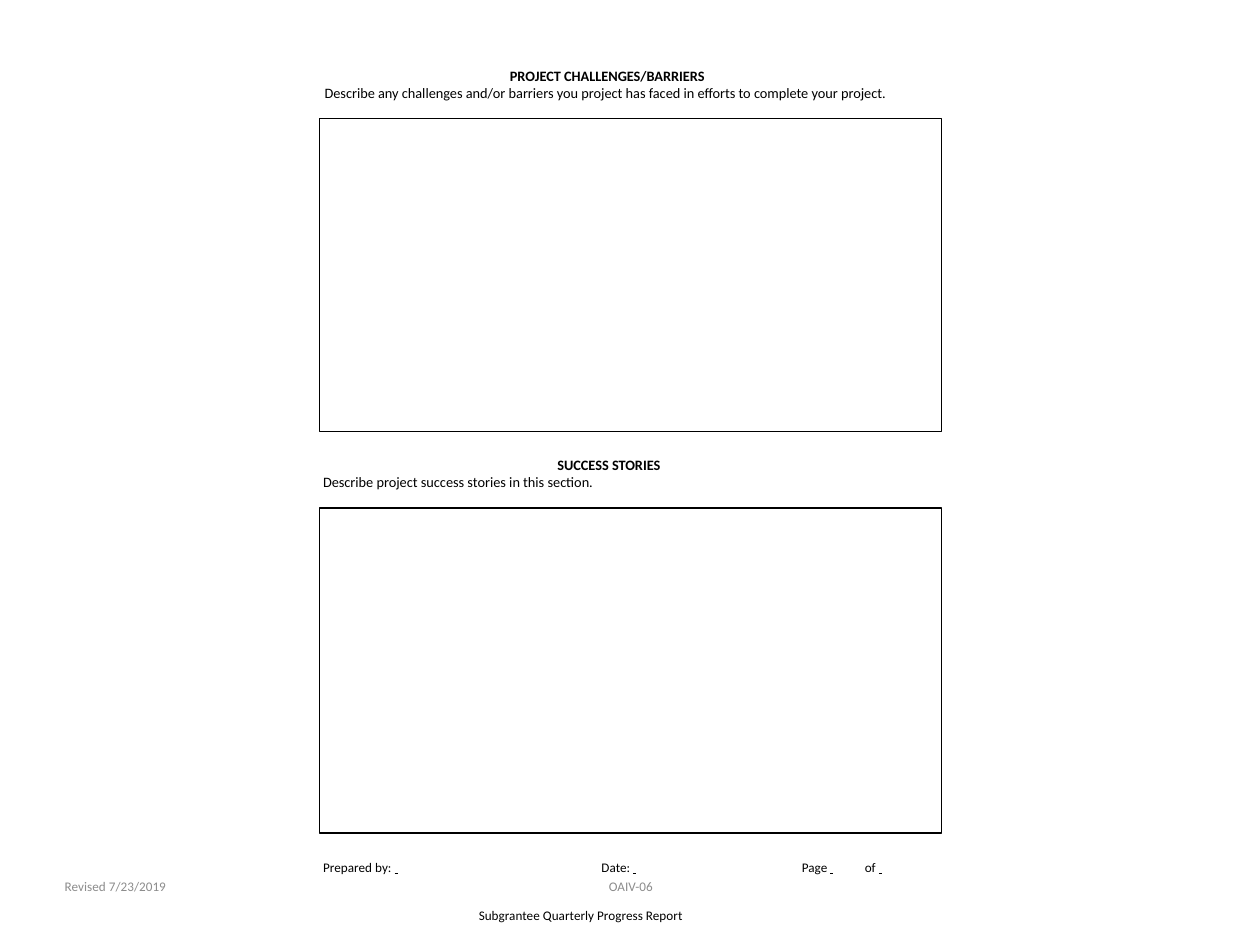
import pptx
import pptx.dml.color
import pptx.enum.shapes
import pptx.enum.text
import pptx.oxml.ns
import pptx.util
from lxml import etree

Pt = pptx.util.Pt
ALIGN = pptx.enum.text.PP_ALIGN
BLACK = pptx.dml.color.RGBColor(0x00, 0x00, 0x00)
GRAY = pptx.dml.color.RGBColor(0x8C, 0x8C, 0x8C)
BLANK = " \t"


class FormPage:
    font_name = "Calibri"
    heading_size = 8.2
    small_size = 7.5

    def __init__(self, slide):
        self.slide = slide

    def frame(self, left, top, width, height):
        box = self.slide.shapes.add_textbox(Pt(left), Pt(top), Pt(width), Pt(height))
        text = box.text_frame
        text.word_wrap = True
        text.margin_left = text.margin_top = text.margin_right = text.margin_bottom = 0
        return text

    def fill_paragraph(self, paragraph, parts, size, color=BLACK, bold=False,
                       align=ALIGN.LEFT, indent=0, tabs=()):
        properties = paragraph._p.get_or_add_pPr()
        properties.set("marL", str(Pt(indent)))
        properties.set("indent", "0")
        if tabs:
            stops = etree.SubElement(properties, pptx.oxml.ns.qn("a:tabLst"))
            for position in tabs:
                etree.SubElement(stops, pptx.oxml.ns.qn("a:tab"),
                                 pos=str(Pt(position)), algn="l")
        paragraph.alignment = align
        paragraph.font.name = self.font_name
        paragraph.font.size = Pt(size)
        paragraph.font.bold = bold
        paragraph.font.color.rgb = color
        for part in parts:
            run = paragraph.add_run()
            run.text = part
            if part == BLANK:
                run.font.underline = True

    def section(self, left, top, width, title, title_align, title_indent,
                prompt, prompt_align, prompt_indent):
        text = self.frame(left, top, width, 21)
        self.fill_paragraph(text.paragraphs[0], [title], self.heading_size, bold=True,
                            align=title_align, indent=title_indent)
        description = text.add_paragraph()
        description.space_before = Pt(0.2)
        self.fill_paragraph(description, [prompt], self.heading_size,
                            align=prompt_align, indent=prompt_indent)

    def line(self, left, top, width, height, parts, color=BLACK,
             align=ALIGN.LEFT, tabs=()):
        text = self.frame(left, top, width, height)
        self.fill_paragraph(text.paragraphs[0], parts, self.small_size, color,
                            align=align, indent=1, tabs=tabs)

    def answer_box(self, top, height):
        box = self.slide.shapes.add_shape(
            pptx.enum.shapes.MSO_SHAPE.RECTANGLE, Pt(182.6), Pt(top), Pt(355.4), Pt(height))
        box.shadow.inherit = False
        box.fill.background()
        box.line.color.rgb = BLACK
        box.line.width = Pt(0.75)


def main():
    presentation = pptx.Presentation()
    presentation.slide_width = Pt(720)
    presentation.slide_height = Pt(540)
    page = FormPage(presentation.slides.add_slide(presentation.slide_layouts[6]))

    page.section(183, 38.2, 326, "PROJECT CHALLENGES/BARRIERS", ALIGN.CENTER, 2,
                 "Describe any challenges and/or barriers you project has faced "
                 "in efforts to complete your project.", ALIGN.CENTER, 0)
    page.section(183.6, 260.6, 193.8, "SUCCESS STORIES", ALIGN.RIGHT, 0,
                 "Describe project success stories in this section.", ALIGN.LEFT, 1)

    signature_fields = [
        (183.6, 135.4, ["Prepared by: ", BLANK], [134.6]),
        (342.7, 82.8, ["Date: ", BLANK], [82.1]),
        (457.2, 53.3, ["Page ", BLANK, "of ", BLANK], [28.1, 52.6]),
    ]
    for left, width, parts, tabs in signature_fields:
        page.line(left, 491, width, 10, parts, tabs=tabs)

    page.answer_box(67.9, 178.6)
    page.answer_box(290.2, 185.8)

    page.line(36, 502, 165.6, 27, ["Revised 7/23/2019"], GRAY)
    page.line(272.6, 518.4, 117.4, 10, ["Subgrantee Quarterly Progress Report"])
    page.line(244.8, 502, 230.4, 27, ["OAIV-06"], GRAY, ALIGN.CENTER)

    presentation.save("out.pptx")


if __name__ == "__main__":
    main()
